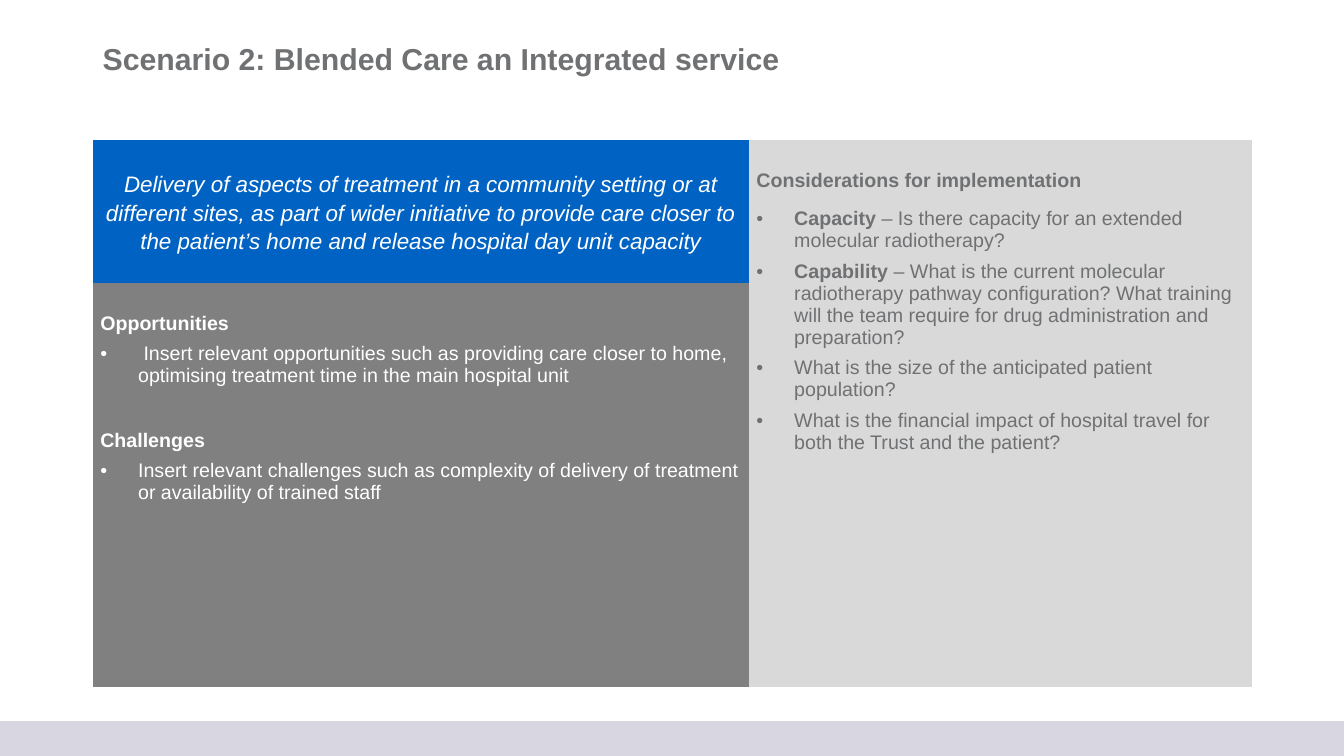
from dataclasses import dataclass

from lxml.etree import SubElement
from pptx import Presentation
from pptx.dml.color import RGBColor
from pptx.enum.shapes import MSO_SHAPE
from pptx.enum.text import MSO_ANCHOR, PP_ALIGN
from pptx.oxml.ns import qn
from pptx.util import Pt

BLUE, DARK, PALE, BAND = "0063C3", "808080", "D9D9D9", "D8D7E1"
WHITE, GREY = "FFFFFF", "707173"
LEFT, WIDE = 66.24, 828
COLS = (468.7, 359.3)
ROWS = (102.2, 288.7)
PLAIN = "{2D5ABB26-0587-4C30-8999-92F81FD0307C}"  # no style, no grid


@dataclass
class Para:
    text: str
    lead: str = ""  # bold words before the text
    bold: bool = False
    slant: bool = False
    size: float = 14
    dot: bool = False
    align: PP_ALIGN = PP_ALIGN.LEFT
    line: float = 1.0
    above: float = 6
    below: float = 0


@dataclass
class Block:
    row: int
    col: int
    fill: str
    ink: str
    top: float
    anchor: MSO_ANCHOR
    paras: list[Para]


def head(text: str, above: float = 6, below: float = 0) -> Para:
    return Para(text, bold=True, line=1.15, above=above, below=below)


def point(text: str, lead: str = "") -> Para:
    return Para(text, lead, dot=True)


BLOCKS = [
    Block(0, 0, BLUE, WHITE, 0, MSO_ANCHOR.MIDDLE, [
        Para("Delivery of aspects of treatment in a community setting or at "
             "different sites, as part of wider initiative to provide care "
             "closer to the patient’s home and release hospital day unit "
             "capacity", slant=True, size=16, align=PP_ALIGN.CENTER,
             line=1.15, below=6)]),
    Block(0, 1, PALE, GREY, 18.5, MSO_ANCHOR.TOP, [
        head("Considerations for implementation", above=0, below=6),
        point("– Is there capacity for an extended molecular radiotherapy?",
              "Capacity "),
        point(" – What is the current molecular radiotherapy pathway "
              "configuration? What training will the team require for drug "
              "administration and preparation?", "Capability"),
        point("What is the size of the anticipated patient population?"),
        point("What is the financial impact of hospital travel for both the "
              "Trust and the patient?")]),
    Block(1, 0, DARK, WHITE, 18.5, MSO_ANCHOR.TOP, [
        head("Opportunities"),
        point(" Insert relevant opportunities such as providing care closer "
              "to home, optimising treatment time in the main hospital unit"),
        head("Challenges", above=28),
        point("Insert relevant challenges such as complexity of delivery of "
              "treatment or availability of trained staff")]),
]


def tint(code: str) -> RGBColor:
    return RGBColor.from_string(code)


def apply(item: object, form: dict[str, object]) -> None:
    for name, value in form.items():
        setattr(item, name, value)


def write(frame, paras: list[Para], ink: str) -> None:
    for spot, para in enumerate(paras):
        line = frame.paragraphs[0] if spot == 0 else frame.add_paragraph()
        apply(line, {"alignment": para.align, "line_spacing": para.line,
                     "space_before": Pt(para.above),
                     "space_after": Pt(para.below)})
        if para.dot:
            props = line._p.get_or_add_pPr()
            props.set("marL", str(Pt(27)))
            props.set("indent", str(-Pt(27)))
            SubElement(props, qn("a:buFont"), typeface="Arial")
            SubElement(props, qn("a:buChar"), char="•")
        for text, bold in ((para.lead, True), (para.text, para.bold)):
            if text:
                run = line.add_run()
                run.text = text
                apply(run.font, {"name": "Arial", "size": Pt(para.size),
                                 "bold": bold, "italic": para.slant})
                run.font.color.rgb = tint(ink)


def main() -> None:
    deck = Presentation()
    apply(deck, {"slide_width": Pt(960), "slide_height": Pt(540)})
    slide = deck.slides.add_slide(deck.slide_layouts[6])

    # Bottom band
    band = slide.shapes.add_shape(MSO_SHAPE.RECTANGLE, Pt(0), Pt(515.5),
                                  Pt(960), Pt(24.5))
    band.shadow.inherit = False
    band.fill.solid()
    band.fill.fore_color.rgb = tint(BAND)
    band.line.color.rgb = tint(BAND)
    band.line.width = Pt(1)

    # Title
    title = slide.shapes.add_textbox(Pt(LEFT), Pt(28.8), Pt(WIDE), Pt(54))
    apply(title.text_frame, {"word_wrap": True, "margin_bottom": Pt(28),
                             "vertical_anchor": MSO_ANCHOR.MIDDLE})
    write(title.text_frame,
          [Para("Scenario 2: Blended Care an Integrated service", bold=True,
                size=21.6, line=0.9, above=0)], GREY)

    # Table
    holder = slide.shapes.add_table(len(ROWS), len(COLS), Pt(LEFT),
                                    Pt(100.1), Pt(WIDE), Pt(sum(ROWS)))
    for style in holder.element.iter(qn("a:tableStyleId")):
        style.text = PLAIN
    grid = holder.table
    apply(grid, {"first_row": False, "horz_banding": False})
    for col, width in zip(grid.columns, COLS):
        col.width = Pt(width)
    for row, height in zip(grid.rows, ROWS):
        row.height = Pt(height)
    grid.cell(0, 1).merge(grid.cell(1, 1))

    # Cells
    for block in BLOCKS:
        cell = grid.cell(block.row, block.col)
        apply(cell, {"margin_left": Pt(5.4), "margin_right": Pt(5.4),
                     "margin_top": Pt(block.top), "margin_bottom": Pt(0),
                     "vertical_anchor": block.anchor})
        cell.fill.solid()
        cell.fill.fore_color.rgb = tint(block.fill)
        write(cell.text_frame, block.paras, block.ink)

    deck.save("out.pptx")


if __name__ == "__main__":
    main()
